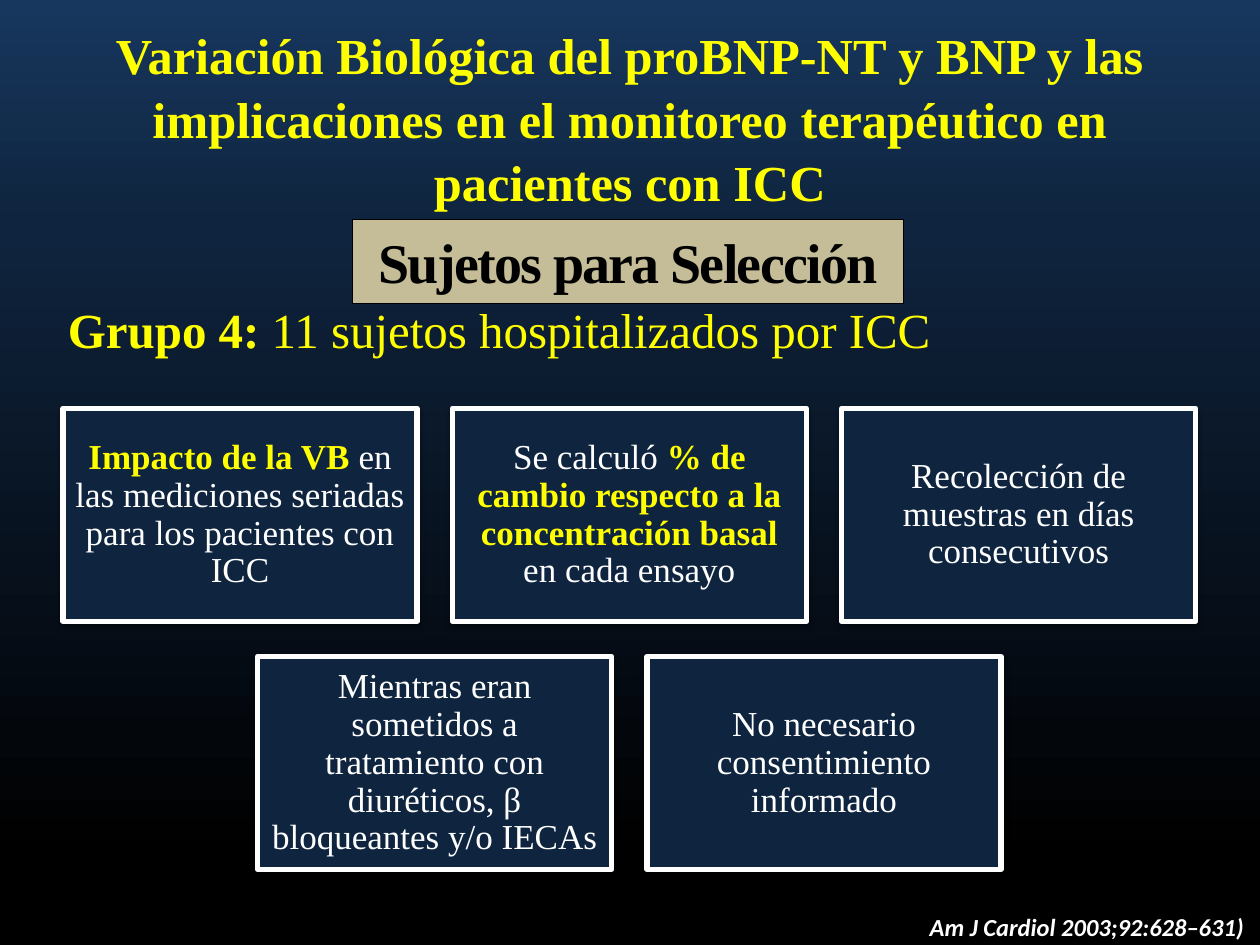
from copy import deepcopy
from dataclasses import dataclass

from lxml.etree import SubElement
from pptx import Presentation
from pptx.dml.color import RGBColor
from pptx.enum.shapes import MSO_SHAPE
from pptx.enum.text import MSO_ANCHOR, PP_ALIGN
from pptx.oxml.ns import qn
from pptx.shapes.autoshape import Shape
from pptx.slide import Slide
from pptx.util import Inches, Pt


@dataclass(frozen=True)
class Theme:
    serif: str = "Times New Roman"
    sans: str = "Calibri"
    yellow: str = "FFFF00"
    white: str = "FFFFFF"
    black: str = "000000"
    tan: str = "C4BD97"
    navy: str = "0F243E"
    backdrop: tuple = ((0, "17375E"), (0.24, "0F243E"), (0.91, "000000"))
    title_size: float = 28.8
    banner_size: float = 32
    group_size: float = 28
    card_size: float = 20
    citation_size: float = 14


@dataclass(frozen=True)
class Span:
    text: str
    key: bool = False


@dataclass(frozen=True)
class Card:
    column: float
    row: int
    spans: tuple[Span, ...]


@dataclass(frozen=True)
class Grid:
    left: float = 0.5
    top: float = 3.24
    width: float = 2.81
    height: float = 1.69
    gap: float = 0.28

    def place(self, column: float, row: int) -> tuple[float, float, float, float]:
        return (self.left + column * (self.width + self.gap),
                self.top + row * (self.height + self.gap), self.width, self.height)


THEME = Theme()
GRID = Grid()
CARDS = (
    Card(0, 0, (Span("Impacto de la VB ", True),
                Span("en las mediciones seriadas para los pacientes con ICC"))),
    Card(1, 0, (Span("Se calculó "),
                Span("% de cambio respecto a la concentración basal ", True),
                Span("en cada ensayo"))),
    Card(2, 0, (Span("Recolección de muestras en días consecutivos"),)),
    Card(0.5, 1, (Span("Mientras eran sometidos a tratamiento con diuréticos, "
                       "β bloqueantes y/o IECAs"),)),
    Card(1.5, 1, (Span("No necesario consentimiento informado"),)),
)


def paint_background(slide: Slide) -> None:
    fill = slide.background.fill
    fill.gradient()
    fill.gradient_angle = 270
    last_stop = fill.gradient_stops[1]._gs
    last_stop.addprevious(deepcopy(last_stop))
    for stop, (position, color) in zip(fill.gradient_stops, THEME.backdrop):
        stop.position = position
        stop.color.rgb = RGBColor.from_string(color)


def write(shape: Shape, spans: tuple[Span, ...], size: float, color: str,
          align: PP_ALIGN, font: str = THEME.serif, key_color: str = THEME.yellow,
          anchor: MSO_ANCHOR = MSO_ANCHOR.MIDDLE, spacing: float = 1,
          wrap: bool = True) -> None:
    frame = shape.text_frame
    frame.word_wrap = wrap
    frame.vertical_anchor = anchor
    paragraph = frame.paragraphs[0]
    paragraph.alignment = align
    paragraph.line_spacing = spacing
    paragraph.font.name = font
    paragraph.font.size = Pt(size)
    for span in spans:
        run = paragraph.add_run()
        run.text = span.text
        run.font.bold = span.key
        run.font.color.rgb = RGBColor.from_string(key_color if span.key else color)


def add_label(slide: Slide, *box: float) -> Shape:
    return slide.shapes.add_textbox(*map(Inches, box))


def add_panel(slide: Slide, box: tuple[float, ...], fill: str, line: str,
              weight: float) -> Shape:
    panel = slide.shapes.add_shape(MSO_SHAPE.RECTANGLE, *map(Inches, box))
    panel.shadow.inherit = False
    panel.fill.solid()
    panel.fill.fore_color.rgb = RGBColor.from_string(fill)
    panel.line.color.rgb = RGBColor.from_string(line)
    panel.line.width = Pt(weight)
    return panel


def cast_shadow(panel: Shape) -> None:
    effects = panel._element.spPr.find(qn("a:effectLst"))
    shadow = SubElement(effects, qn("a:outerShdw"), blurRad=str(Pt(3.1)),
                        dist=str(Pt(1.8)), dir="5400000", rotWithShape="0")
    tint = SubElement(shadow, qn("a:srgbClr"), val=THEME.black)
    SubElement(tint, qn("a:alpha"), val="35000")


def add_card(slide: Slide, card: Card) -> None:
    panel = add_panel(slide, GRID.place(card.column, card.row),
                      THEME.navy, THEME.white, 3)
    cast_shadow(panel)
    frame = panel.text_frame
    frame.margin_left = frame.margin_right = Inches(0.08)
    frame.margin_top = frame.margin_bottom = Inches(0.08)
    write(panel, card.spans, THEME.card_size, THEME.white, PP_ALIGN.CENTER, spacing=0.9)


def main() -> None:
    deck = Presentation()
    deck.slide_width, deck.slide_height = Inches(10), Inches(7.5)
    slide = deck.slides.add_slide(deck.slide_layouts[6])
    paint_background(slide)

    title = add_label(slide, 0.5, 0.3, 9, 1.25)
    write(title, (Span("Variación Biológica del proBNP-NT y BNP y las implicaciones "
                       "en el monitoreo terapéutico en pacientes con ICC", True),),
          THEME.title_size, THEME.yellow, PP_ALIGN.CENTER, spacing=1.05)

    banner = add_panel(slide, (2.8, 1.74, 4.37, 0.67), THEME.tan, THEME.black, 0.75)
    write(banner, (Span("Sujetos para Selección", True),), THEME.banner_size,
          THEME.black, PP_ALIGN.CENTER, key_color=THEME.black)
    banner.text_frame.paragraphs[0].runs[0].font._element.set("spc", "-100")

    citation = add_label(slide, 7.28, 7.19, 2.72, 0.34)
    write(citation, (Span("Am J Cardiol 2003;92:628–631)", True),),
          THEME.citation_size, THEME.white, PP_ALIGN.LEFT, font=THEME.sans,
          key_color=THEME.white, anchor=MSO_ANCHOR.TOP, wrap=False)
    citation.text_frame.paragraphs[0].font.italic = True

    for card in CARDS:
        add_card(slide, card)

    group = add_label(slide, 0.44, 2.33, 8.81, 0.57)
    write(group, (Span("Grupo 4: ", True), Span("11 sujetos hospitalizados por ICC")),
          THEME.group_size, THEME.yellow, PP_ALIGN.JUSTIFY, anchor=MSO_ANCHOR.TOP)

    deck.save("out.pptx")


if __name__ == "__main__":
    main()
